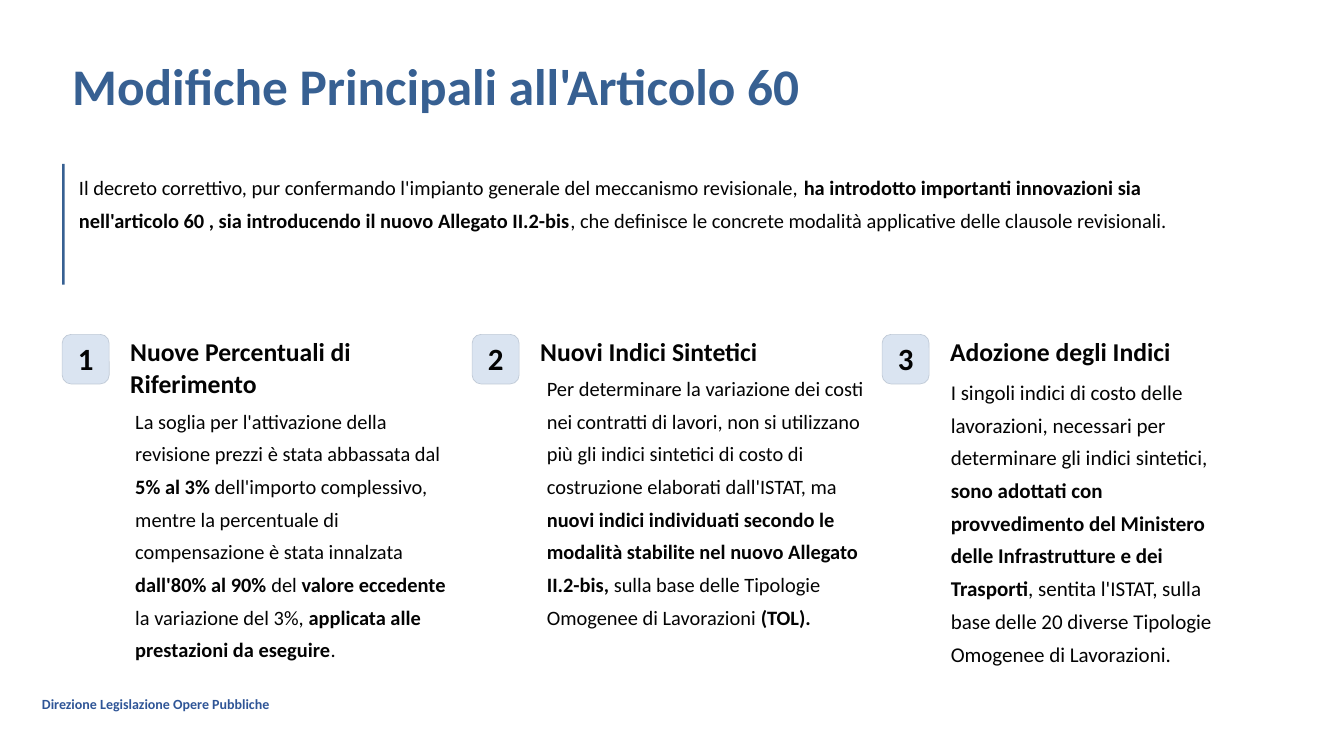
from pptx import Presentation
from pptx.dml.color import RGBColor
from pptx.enum.shapes import MSO_SHAPE as Shape
from pptx.enum.text import MSO_ANCHOR as Anchor, MSO_AUTO_SIZE as Fit, PP_ALIGN as Align
from pptx.util import Pt

INK, BLUE, PALE, EDGE = "030303", "376092", "DAE4F1", "C0CAD7"


def tint(code):
    return RGBColor.from_string(code)


class Deck:
    font = "Calibri"

    def __init__(self, wide, high):
        self.deck = Presentation()
        self.deck.slide_width, self.deck.slide_height = Pt(wide), Pt(high)
        self.slide = self.deck.slides.add_slide(self.deck.slide_layouts[5])

    def fill_in(self, frame, text, size, lead=None, color=INK, bold=False, align=Align.LEFT, top=0):
        frame.margin_left = frame.margin_right = frame.margin_bottom = 0
        frame.margin_top = Pt(top)
        frame.word_wrap = True
        frame.auto_size = Fit.NONE
        frame.vertical_anchor = Anchor.TOP
        para = frame.paragraphs[0]
        para.alignment = align
        if lead:
            para.line_spacing = Pt(lead)
        for i, part in enumerate(text.split("*")):
            if part:
                run = para.add_run()
                run.text = part
                run.font.name, run.font.size = self.font, Pt(size)
                run.font.bold = bold or i % 2 == 1
                run.font.color.rgb = tint(color)

    def title(self, text, box, size, lead):
        head = self.slide.shapes.title
        head.left, head.top, head.width, head.height = map(Pt, box)
        self.fill_in(head.text_frame, text, size, lead, BLUE, True)

    def text(self, text, box, size, lead=None, **style):
        area = self.slide.shapes.add_textbox(*map(Pt, box))
        self.fill_in(area.text_frame, text, size, lead, **style)

    def shape(self, kind, box, fill, line=None):
        item = self.slide.shapes.add_shape(kind, *map(Pt, box))
        item.shadow.inherit = False
        item.fill.solid()
        item.fill.fore_color.rgb = tint(fill)
        if line:
            item.line.color.rgb = tint(line)
            item.line.width = Pt(0.6)
        else:
            item.line.fill.background()
        return item

    def badge(self, text, box):
        item = self.shape(Shape.ROUNDED_RECTANGLE, box, PALE, EDGE)
        item.adjustments[0] = 0.19
        self.fill_in(item.text_frame, text, 26.5, 26.5, bold=True, align=Align.CENTER, top=7.2)


POINTS = [
    ("Nuove Percentuali di Riferimento",
     "La soglia per l'attivazione della revisione prezzi è stata abbassata dal *5% al 3% *"
     "dell'importo complessivo, mentre la percentuale di compensazione è stata innalzata "
     "*dall'80% al 90% *del *valore eccedente *la variazione del 3%, "
     "*applicata alle prestazioni da eseguire*.",
     (115.9, 343.4, 272.9, 255.6), 17.5),
    ("Nuovi Indici Sintetici",
     "Per determinare la variazione dei costi nei contratti di lavori, non si utilizzano più "
     "gli indici sintetici di costo di costruzione elaborati dall'ISTAT, ma "
     "*nuovi indici individuati secondo le modalità stabilite nel nuovo Allegato II.2-bis,*"
     " sulla base delle Tipologie Omogenee di Lavorazioni *(TOL).*",
     (468.7, 315.4, 272.9, 255.6), 17.5),
    ("Adozione degli Indici",
     "I singoli indici di costo delle lavorazioni, necessari per determinare gli indici "
     "sintetici, *sono adottati con provvedimento del Ministero delle Infrastrutture e dei "
     "Trasporti*, sentita l'ISTAT, sulla base delle 20 diverse Tipologie Omogenee di Lavorazioni.",
     (815, 319, 244.8, 252), 18),
]


def main():
    deck = Deck(1152, 648)
    deck.title("Modifiche Principali all'Articolo 60", (61.9, 43.9, 747.4, 55.5), 44, 55.5)
    deck.shape(Shape.RECTANGLE, (53.3, 140.4, 2.2, 103.7), BLUE)
    deck.text("Il decreto correttivo, pur confermando l'impianto generale del meccanismo revisionale, "
              "*ha introdotto importanti innovazioni sia nell'articolo 60 , sia introducendo il nuovo "
              "Allegato II.2-bis*, che definisce le concrete modalità applicative delle clausole "
              "revisionali.", (67.7, 142.6, 958.3, 65.5), 17.5, 28.5)
    for i, (head, body, box, size) in enumerate(POINTS):
        left, top = 53.3 + 351.4 * i, 286.6
        deck.badge(str(i + 1), (left, top, 40.3, 42.5))
        deck.text(head, (left + 58.3, top, 275, 59.8 if i == 0 else 29.5), 22, 27.5, bold=True)
        deck.text(body, box, size, 28)
    deck.text("Direzione Legislazione Opere Pubbliche", (36, 596.2, 465, 15), 12,
              color="2F5597", bold=True)
    deck.deck.save("out.pptx")


if __name__ == "__main__":
    main()
